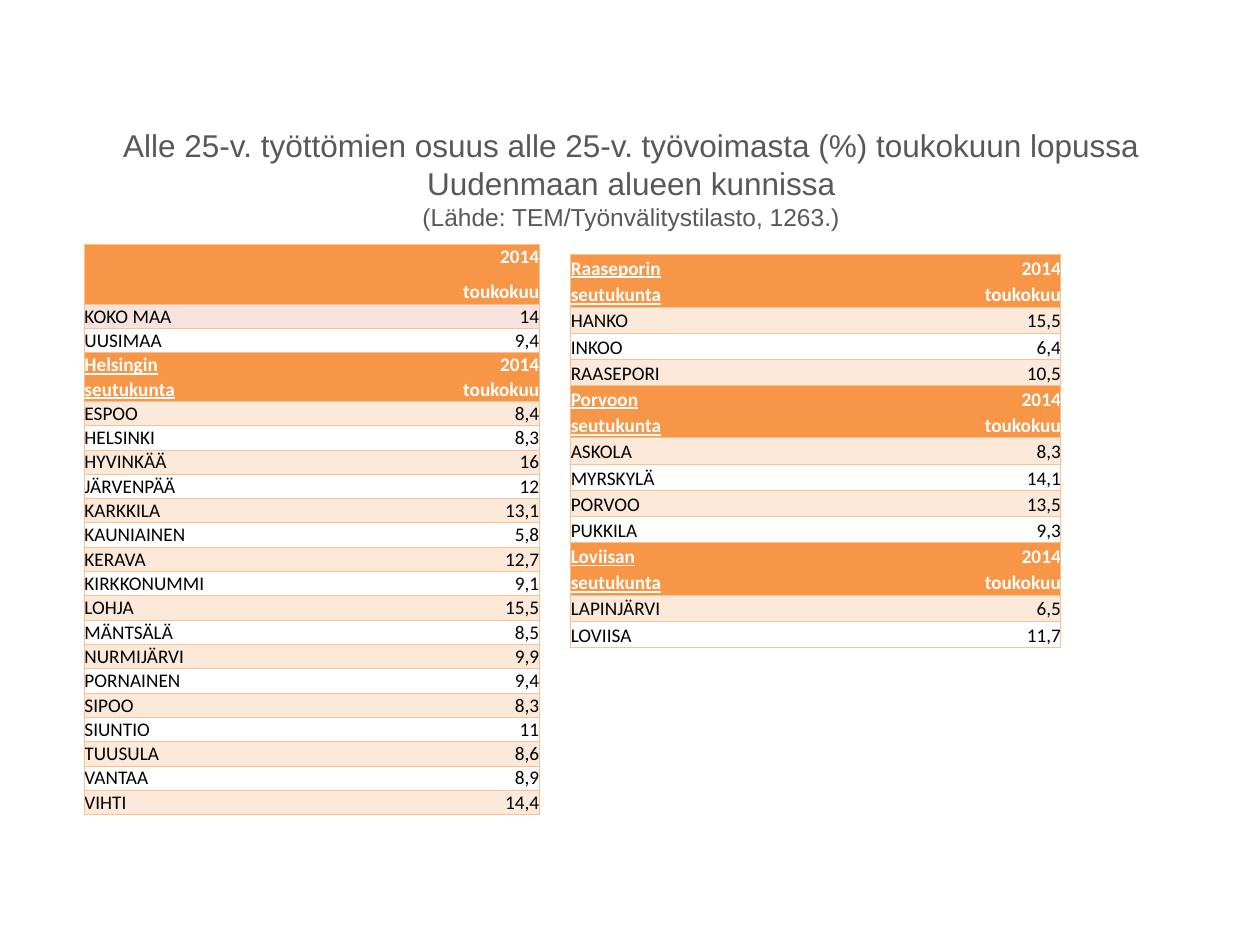
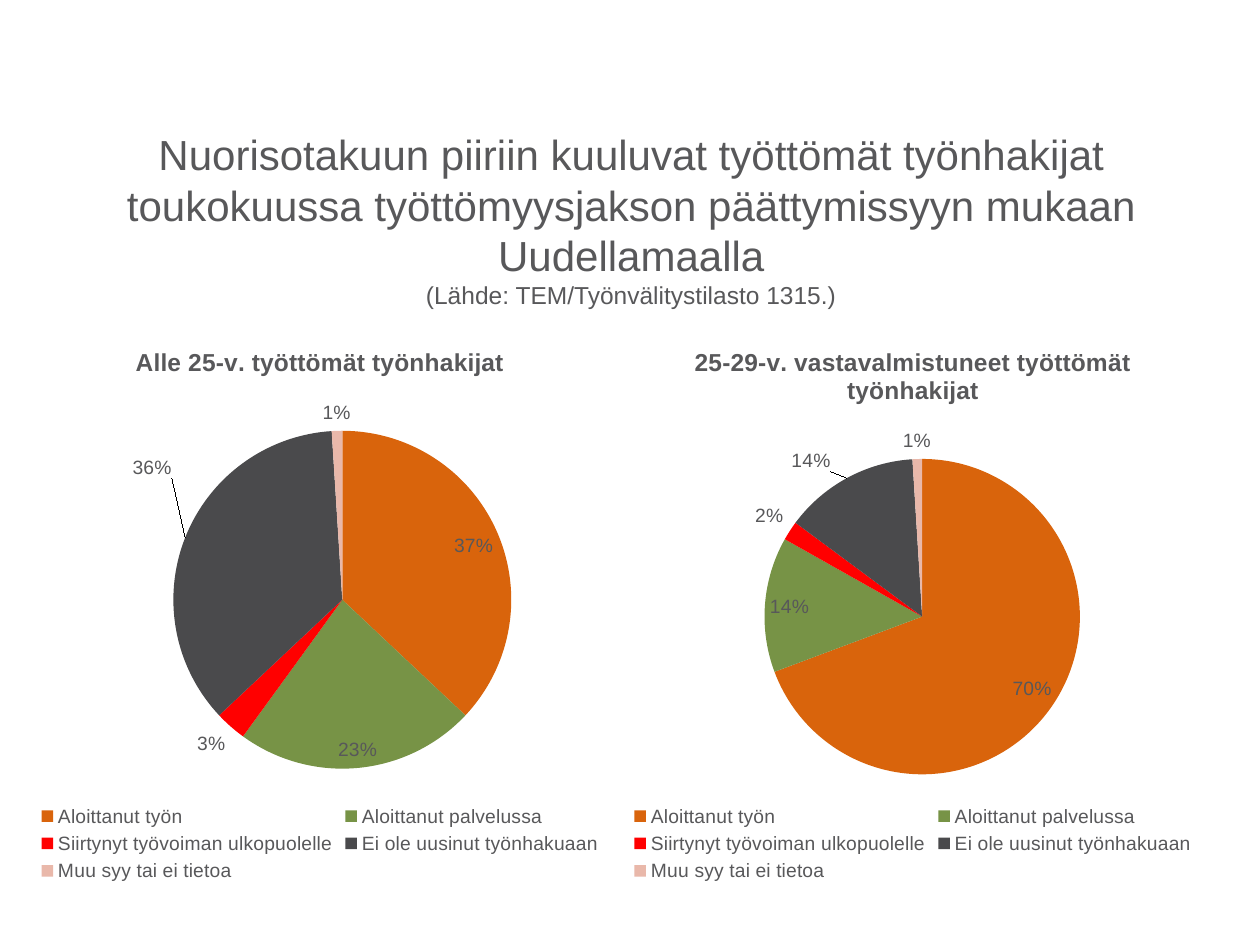
from lxml.etree import SubElement
from pptx import Presentation
from pptx.chart.data import CategoryChartData
from pptx.dml.color import RGBColor
from pptx.enum.chart import XL_CHART_TYPE, XL_LABEL_POSITION, XL_LEGEND_POSITION
from pptx.enum.text import MSO_ANCHOR, PP_ALIGN
from pptx.oxml import parse_xml
from pptx.oxml.ns import nsdecls, qn
from pptx.util import Inches, Pt

GREY = "58585A"
WHITE = "FFFFFF"
BLACK = "000000"
HEADER_FILL = "F79646"
BAND_FILL = "FDE9D9"
COUNTRY_FILL = "F6E3DD"
BORDER = "FAC090"

RATES_TITLE = (
    "Alle 25-v. työttömien osuus alle 25-v. työvoimasta (%) toukokuun lopussa Uudenmaan alueen kunnissa",
    "(Lähde: TEM/Työnvälitystilasto, 1263.)",
)
REASONS_TITLE = (
    "Nuorisotakuun piiriin kuuluvat työttömät työnhakijat toukokuussa työttömyysjakson päättymissyyn mukaan Uudellamaalla",
    "(Lähde: TEM/Työnvälitystilasto 1315.)",
)
PERIOD = ("2014", "toukokuu")

RATE_TABLES = [
    {
        "at": (0.67, 1.94, 3.61, 4.44),
        "label_width": 2.5,
        "sections": [
            ("", COUNTRY_FILL, [("KOKO MAA", "14"), ("UUSIMAA", "9,4")]),
            ("Helsingin", BAND_FILL, [
                ("ESPOO", "8,4"), ("HELSINKI", "8,3"), ("HYVINKÄÄ", "16"),
                ("JÄRVENPÄÄ", "12"), ("KARKKILA", "13,1"), ("KAUNIAINEN", "5,8"),
                ("KERAVA", "12,7"), ("KIRKKONUMMI", "9,1"), ("LOHJA", "15,5"),
                ("MÄNTSÄLÄ", "8,5"), ("NURMIJÄRVI", "9,9"), ("PORNAINEN", "9,4"),
                ("SIPOO", "8,3"), ("SIUNTIO", "11"), ("TUUSULA", "8,6"),
                ("VANTAA", "8,9"), ("VIHTI", "14,4"),
            ]),
        ],
    },
    {
        "at": (4.53, 2.02, 3.89, 3.12),
        "label_width": 2.69,
        "sections": [
            ("Raaseporin", BAND_FILL, [("HANKO", "15,5"), ("INKOO", "6,4"), ("RAASEPORI", "10,5")]),
            ("Porvoon", BAND_FILL, [
                ("ASKOLA", "8,3"), ("MYRSKYLÄ", "14,1"), ("PORVOO", "13,5"), ("PUKKILA", "9,3"),
            ]),
            ("Loviisan", BAND_FILL, [("LAPINJÄRVI", "6,5"), ("LOVIISA", "11,7")]),
        ],
    },
]

REASONS = [
    ("Aloittanut työn", "D9640C"),
    ("Aloittanut palvelussa", "779346"),
    ("Siirtynyt työvoiman ulkopuolelle", "FF0000"),
    ("Ei ole uusinut työnhakuaan", "4A4A4C"),
    ("Muu syy tai ei tietoa", "E9B8AA"),
]
MOVED_LABEL = 3

PIES = [
    {
        "title": "Alle 25-v. työttömät työnhakijat",
        "values": (37, 23, 3, 36, 1),
        "at": (0, 2.57, 5.08, 4.47),
        "plot": {"x": 0.27, "y": 0.19, "w": 0.53, "h": 0.6},
        "label_shift": {"x": -0.01, "y": -0.1},
    },
    {
        "title": "25-29-v. vastavalmistuneet työttömät työnhakijat",
        "values": (70, 14, 2, 14, 1),
        "at": (4.76, 2.57, 4.97, 4.47),
        "plot": {"x": 0.26, "y": 0.24, "w": 0.51, "h": 0.56},
        "label_shift": {"x": -0.02, "y": 0},
    },
]


def color(value):
    return RGBColor.from_string(value)


def format_font(font, size, name="Arial", fill=GREY, bold=False, underline=False):
    font.size = Pt(size)
    font.name = name
    font.bold = bold
    font.underline = underline
    font.color.rgb = color(fill)


def write(paragraph, text, align=PP_ALIGN.LEFT, **font_format):
    paragraph.alignment = align
    run = paragraph.add_run()
    run.text = text
    format_font(run.font, **font_format)


def add_titled_slide(presentation, lines, top, size):
    slide = presentation.slides.add_slide(presentation.slide_layouts[5])
    title = slide.shapes.title
    title.left, title.top, title.width, title.height = map(Inches, (0.51, top, 9, 0.7))
    title.text_frame.vertical_anchor = MSO_ANCHOR.MIDDLE
    paragraph = title.text_frame.paragraphs[0]
    heading, source = lines
    write(paragraph, heading, PP_ALIGN.CENTER, size=size)
    paragraph.add_line_break()
    write(paragraph, source, PP_ALIGN.CENTER, size=14)
    return slide


def set_borders(cell, sides):
    properties = cell._tc.get_or_add_tcPr()
    for side in "LRTB":
        line = SubElement(properties, qn(f"a:ln{side}"), w=str(Pt(0.5)))
        if side in sides:
            fill = SubElement(line, qn("a:solidFill"))
            SubElement(fill, qn("a:srgbClr"), val=BORDER)
        else:
            SubElement(line, qn("a:noFill"))


def table_rows(sections):
    rows = []
    for region, band, municipalities in sections:
        labels = (region, "seutukunta" if region else "")
        for label, period, sides in zip(labels, PERIOD, "TB"):
            rows.append((label, period, HEADER_FILL, sides))
        for index, (municipality, rate) in enumerate(municipalities):
            rows.append((municipality, rate, WHITE if index % 2 else band, "TB"))
    return rows


def add_rate_table(slide, at, label_width, sections):
    rows = table_rows(sections)
    width, height = at[2:]
    table = slide.shapes.add_table(len(rows), 2, *map(Inches, at)).table
    table.first_row = table.horz_banding = False
    table.columns[0].width = Inches(label_width)
    table.columns[1].width = Inches(width - label_width)
    for row_index, (label, value, fill, sides) in enumerate(rows):
        table.rows[row_index].height = Inches(height / len(rows))
        header = fill == HEADER_FILL
        columns = ((label, "L", PP_ALIGN.LEFT), (value, "R", PP_ALIGN.RIGHT))
        for column_index, (text, outer_side, align) in enumerate(columns):
            cell = table.cell(row_index, column_index)
            cell.margin_left = cell.margin_right = cell.margin_top = cell.margin_bottom = 0
            cell.vertical_anchor = MSO_ANCHOR.BOTTOM
            set_borders(cell, sides + outer_side)
            cell.fill.solid()
            cell.fill.fore_color.rgb = color(fill)
            write(cell.text_frame.paragraphs[0], text, align, size=11, name="Calibri",
                  fill=WHITE if header else BLACK, bold=header,
                  underline=header and column_index == 0)
    if not sections[0][0]:
        table.cell(0, 0).merge(table.cell(1, 0))


def manual_layout(settings):
    items = "".join(f'<c:{name} val="{value}"/>' for name, value in settings.items())
    return parse_xml(f'<c:layout {nsdecls("c")}><c:manualLayout>{items}</c:manualLayout></c:layout>')


def place_plot(chart, plot):
    area = chart._chartSpace.chart.plotArea
    for layout in area.findall(qn("c:layout")):
        area.remove(layout)
    area.insert(0, manual_layout({"layoutTarget": "inner", "xMode": "edge", "yMode": "edge", **plot}))


def add_pie(slide, title, values, at, plot, label_shift):
    data = CategoryChartData(number_format='0"%"')
    data.categories = [reason for reason, _ in REASONS]
    data.add_series("Series 1", values)
    chart = slide.shapes.add_chart(XL_CHART_TYPE.PIE, *map(Inches, at), data).chart
    format_font(chart.font, 10)
    chart.has_title = True
    write(chart.chart_title.text_frame.paragraphs[0], title, PP_ALIGN.CENTER, size=14, bold=True)
    chart.chart_title.include_in_layout = False
    chart.has_legend = True
    chart.legend.position = XL_LEGEND_POSITION.BOTTOM
    chart.legend.include_in_layout = False
    format_font(chart.legend.font, 11)
    place_plot(chart, plot)

    chart.plots[0].vary_by_categories = True
    series = chart.plots[0].series[0]
    for index, (_, fill) in enumerate(REASONS):
        point_fill = series.points[index].format.fill
        point_fill.solid()
        point_fill.fore_color.rgb = color(fill)

    labels = series.data_labels
    labels.show_value = True
    labels.position = XL_LABEL_POSITION.BEST_FIT
    format_font(labels.font, 11)
    moved = series.points[MOVED_LABEL].data_label
    moved.position = XL_LABEL_POSITION.OUTSIDE_END
    format_font(moved.font, 11)
    labels_element = labels._element
    labels_element.find(qn("c:dLbl")).find(qn("c:idx")).addnext(manual_layout(label_shift))
    for leader in labels_element.findall(qn("c:showLeaderLines")):
        labels_element.remove(leader)
    SubElement(labels_element, qn("c:showLeaderLines"), val="1")


def main():
    presentation = Presentation()
    presentation.slide_width = Inches(10)
    presentation.slide_height = Inches(7.5)
    rates_slide = add_titled_slide(presentation, RATES_TITLE, top=1.07, size=18)
    for rate_table in RATE_TABLES:
        add_rate_table(rates_slide, **rate_table)
    reasons_slide = add_titled_slide(presentation, REASONS_TITLE, top=1.39, size=24)
    for pie in PIES:
        add_pie(reasons_slide, **pie)
    presentation.save("out.pptx")


if __name__ == "__main__":
    main()
